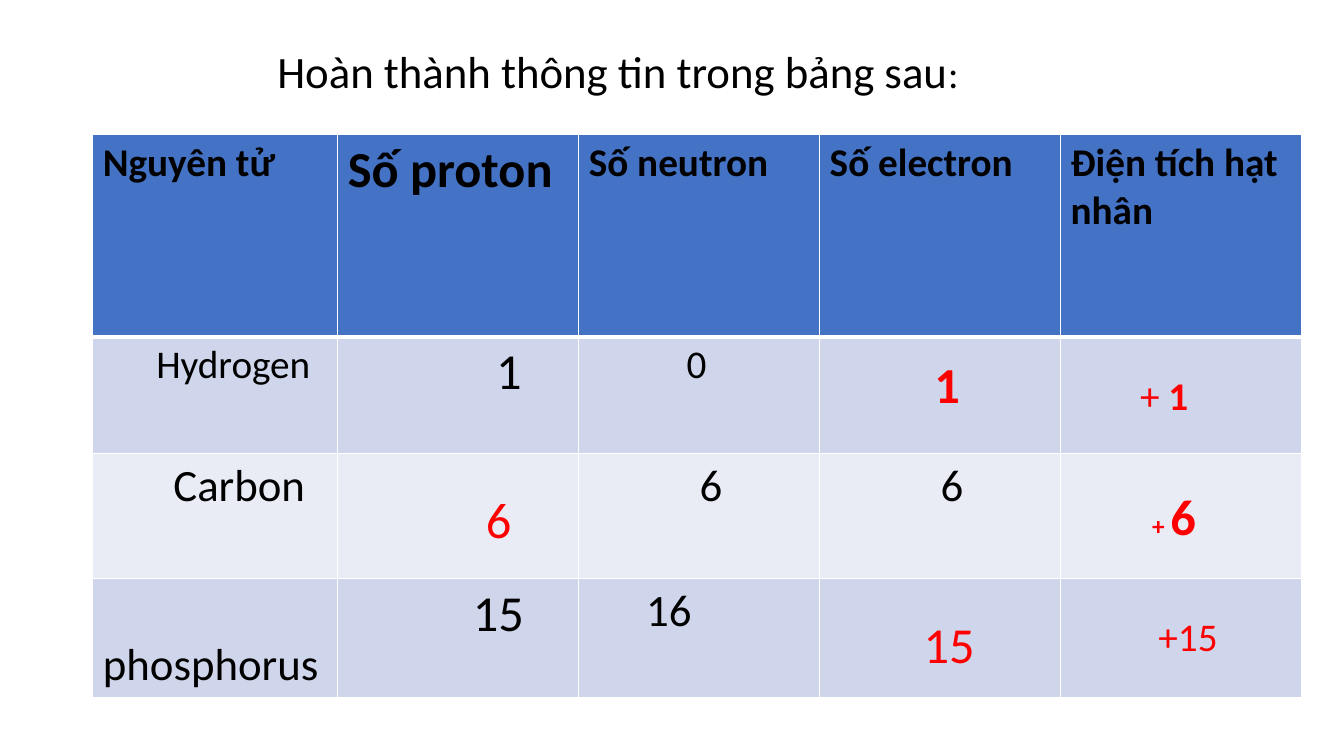
from dataclasses import dataclass

from lxml import etree
from pptx import Presentation
from pptx.dml.color import RGBColor
from pptx.enum.text import MSO_ANCHOR as Anchor, MSO_AUTO_SIZE as AutoSize, PP_ALIGN as Align
from pptx.oxml.ns import qn
from pptx.util import Inches, Pt


@dataclass(frozen=True)
class Theme:
    font: str = "Calibri"
    ink: str = "000000"
    answer: str = "FF0000"
    border: str = "FFFFFF"
    header: str = "4472C4"
    bands: tuple = ("CFD5EA", "E9EBF5")
    tiny: int = 18
    small: int = 28
    medium: int = 32
    large: int = 36
    thin: int = 1
    thick: int = 3
    pad: float = 0.1


class SlideBuilder:
    def __init__(self, prs, theme):
        self.theme = theme
        self.slide = prs.slides.add_slide(prs.slide_layouts[5])

    def add_run(self, p, text, size, color, bold=False):
        r = p.add_run()
        r.text = text
        font = r.font
        font.name, font.size, font.bold = self.theme.font, Pt(size), bold
        font.color.rgb = RGBColor.from_string(color)

    def add_title(self, box, runs):
        sp = self.slide.shapes.title
        sp.left, sp.top, sp.width, sp.height = map(Inches, box)
        tf = sp.text_frame
        tf.auto_size, tf.vertical_anchor = AutoSize.NONE, Anchor.MIDDLE
        p = tf.paragraphs[0]
        p.alignment, p.line_spacing = Align.LEFT, 0.9
        for text, size in runs:
            self.add_run(p, text, size, self.theme.ink)

    def add_answer(self, box, runs, indent=0.0):
        sp = self.slide.shapes.add_textbox(*map(Inches, box))
        tf = sp.text_frame
        tf.word_wrap, tf.auto_size = True, AutoSize.SHAPE_TO_FIT_TEXT
        tf.margin_left = Inches(self.theme.pad + indent)
        for text, size, bold in runs:
            self.add_run(tf.paragraphs[0], text, size, self.theme.answer, bold)

    def set_borders(self, cell, top, bottom):
        tc_pr = cell._tc.get_or_add_tcPr()
        widths = {"a:lnL": self.theme.thin, "a:lnR": self.theme.thin, "a:lnT": top, "a:lnB": bottom}
        for i, (tag, width) in enumerate(widths.items()):
            ln = etree.Element(qn(tag), w=str(Pt(width)))
            fill = etree.SubElement(ln, qn("a:solidFill"))
            etree.SubElement(fill, qn("a:srgbClr"), val=self.theme.border)
            tc_pr.insert(i, ln)

    def add_table(self, box, col_widths, row_heights, rows):
        th = self.theme
        table = self.slide.shapes.add_table(len(rows), len(col_widths), *map(Inches, box)).table
        for col, width in zip(table.columns, col_widths):
            col.width = Inches(width)
        for i, (row, height, entries) in enumerate(zip(table.rows, row_heights, rows)):
            row.height = Inches(height)
            for cell, entry in zip(row.cells, entries):
                cell.fill.solid()
                band = th.bands[(i - 1) % 2] if i else th.header
                cell.fill.fore_color.rgb = RGBColor.from_string(band)
                self.set_borders(cell, th.thick if i == 1 else th.thin, th.thin if i else th.thick)
                if entry:
                    text, size, indent = entry
                    cell.margin_left = Inches(th.pad + indent)
                    self.add_run(cell.text_frame.paragraphs[0], text, size, th.ink, bold=i == 0)
        return table


def main():
    prs = Presentation()
    prs.slide_width, prs.slide_height = Inches(13.33), Inches(7.5)
    th = Theme()
    page = SlideBuilder(prs, th)

    # Title
    page.add_title((2.65, 0.31, 11.17, 0.85),
                   [("Hoàn thành thông tin trong bảng sau", th.medium), (":", th.small)])

    # Table: each entry is text, size and indent; None is left for an answer
    rows = [
        [("Nguyên tử", th.small, 0), ("Số proton", th.large, 0), ("Số neutron", th.small, 0),
         ("Số electron", th.small, 0), ("Điện tích hạt nhân", th.small, 0)],
        [("Hydrogen", th.small, 0.53), ("1", th.large, 1.47), ("0", th.small, 0.97), None, None],
        [("Carbon", th.medium, 0.7), None, ("6", th.medium, 1.1), ("6", th.medium, 1.1), None],
        [("phosphorus", th.medium, 0), ("15", th.large, 1.24), ("16", th.medium, 0.57), None, None],
    ]
    table = page.add_table((0.92, 1.33, 12, 5.58), [2.43] + [2.39] * 4,
                           [2.01, 1.16, 1.24, 1.18], rows)
    table.cell(3, 0).vertical_anchor = Anchor.BOTTOM

    # Answers over the open cells
    space = 0.06
    page.add_answer((4.66, 4.79, 1, 0.71), [("6", th.large, False)], space)
    page.add_answer((9.17, 3.45, 0.63, 0.71), [("1", th.large, True)])
    page.add_answer((11.21, 3.63, 1, 0.57), [("+ ", th.small, False), ("1", th.small, True)])
    page.add_answer((11.33, 4.76, 1, 0.71), [("+ ", th.tiny, True), ("6", th.large, True)])
    page.add_answer((9, 6.03, 0.96, 0.71), [("15", th.large, False)], space)
    page.add_answer((11.33, 6.03, 1, 0.57), [("+15", th.small, False)], space)

    prs.save("out.pptx")


if __name__ == "__main__":
    main()
